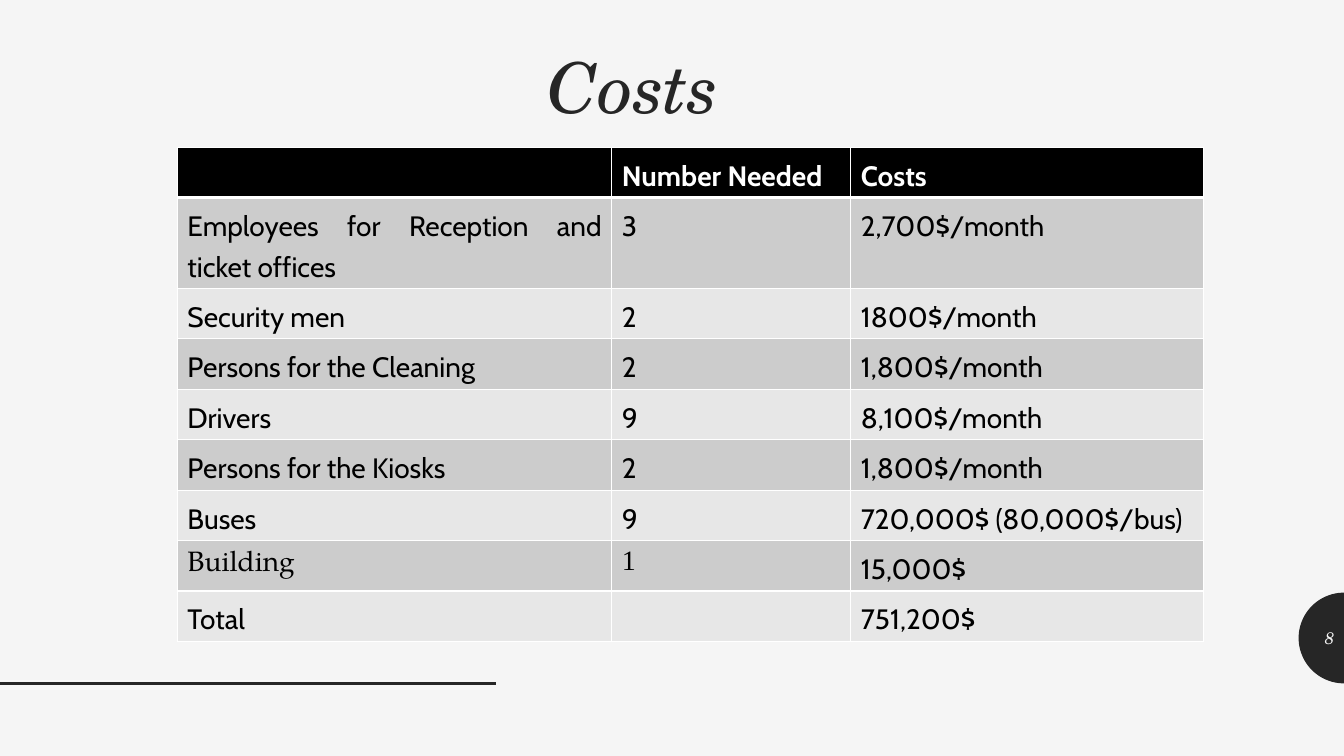
import math
from dataclasses import dataclass
from typing import Any

import lxml.etree
import pptx
import pptx.dml.color
import pptx.enum.shapes
import pptx.enum.text
import pptx.oxml.ns
import pptx.util

ALIGN = pptx.enum.text.PP_ALIGN
ANCHOR = pptx.enum.text.MSO_ANCHOR
qn = pptx.oxml.ns.qn


@dataclass(frozen=True)
class Theme:
    paper: str = "F5F5F5"
    ink: str = "262626"
    header: str = "000000"
    body: str = "000000"
    white: str = "FFFFFF"
    bands: tuple[str, str] = ("CCCCCC", "E7E7E7")
    heading_font: str = "TeX Gyre Schola"
    table_font: str = "Cabin"
    title_size: int = 50
    table_size: int = 20
    number_size: int = 12
    rule_width: int = 2
    border: int = 1
    header_border: int = 3


@dataclass(frozen=True)
class Label:
    text: str
    left: float
    top: float
    width: float
    height: float
    size: int
    color: str
    anchor: Any = ANCHOR.TOP
    line_spacing: float = 1.0


@dataclass(frozen=True)
class CostRow:
    item: str
    number: str
    cost: str
    height: float = 6.4
    item_font: str = Theme.table_font
    number_font: str = Theme.table_font
    plain_number: bool = False


THEME = Theme()
WIDTH = pptx.util.Inches(13.33)
HEIGHT = pptx.util.Inches(7.5)
BADGE_CENTER, BADGE_RADIUS, BADGE_STEPS = 84.4, 6, 48
TABLE_LEFT, TABLE_TOP = 13.2, 19.47
COLUMNS = (32.33, 17.78, 26.26)

LABELS = (
    Label("Costs", 39.08, 6.4, 15.15, 12, THEME.title_size, THEME.ink,
          line_spacing=0.9),
    Label("8", 96.7, 81.73, 3.3, 5.33, THEME.number_size, THEME.paper,
          anchor=ANCHOR.MIDDLE),
)

ROWS = (
    CostRow("", "Number Needed", "Costs"),
    CostRow("Employees for Reception and ticket offices", "3", "2,700$/month",
            height=10.53),
    CostRow("Security men", "2", "1800$/month"),
    CostRow("Persons for the Cleaning", "2", "1,800$/month"),
    CostRow("Drivers", "9", "8,100$/month"),
    CostRow("Persons for the Kiosks", "2", "1,800$/month"),
    CostRow("Buses", "9", "720,000$ (80,000$/bus)"),
    CostRow("Building", "1", "15,000$", item_font="TeX Gyre Pagella",
            number_font="Times New Roman", plain_number=True),
    CostRow("Total", "", "751,200$"),
)


def across(share: float) -> int:
    return round(WIDTH * share / 100)


def down(share: float) -> int:
    return round(HEIGHT * share / 100)


def rgb(color: str) -> pptx.dml.color.RGBColor:
    return pptx.dml.color.RGBColor.from_string(color)


def set_font(p: Any, name: str, size: int, color: str,
             bold: bool = False, italic: bool = False) -> None:
    p.font.name = name
    p.font.size = pptx.util.Pt(size)
    p.font.color.rgb = rgb(color)
    p.font.bold = bold
    p.font.italic = italic


def add_badge(s: Any) -> None:
    radius = down(BADGE_RADIUS)
    angles = [math.pi * (0.5 + i / BADGE_STEPS) for i in range(BADGE_STEPS + 1)]
    points = [(round(WIDTH + radius * math.cos(a)),
               round(down(BADGE_CENTER) + radius * math.sin(a))) for a in angles]
    outline = s.shapes.build_freeform(*points[0])
    outline.add_line_segments(points[1:], close=True)
    sp = outline.convert_to_shape()
    sp.shadow.inherit = False
    sp.fill.solid()
    sp.fill.fore_color.rgb = rgb(THEME.ink)
    sp.line.fill.background()


def add_rule(s: Any) -> None:
    y = down(BADGE_CENTER + BADGE_RADIUS)
    rule = s.shapes.add_connector(
        pptx.enum.shapes.MSO_CONNECTOR.STRAIGHT, 0, y, across(36.91), y)
    rule.line.color.rgb = rgb(THEME.ink)
    rule.line.width = pptx.util.Pt(THEME.rule_width)
    lxml.etree.SubElement(rule._element.spPr, qn("a:effectLst"))


def add_label(s: Any, label: Label) -> None:
    sp = s.shapes.add_textbox(across(label.left), down(label.top),
                              across(label.width), down(label.height))
    tf = sp.text_frame
    tf.word_wrap = True
    tf.vertical_anchor = label.anchor
    p = tf.paragraphs[0]
    p.text = label.text
    p.alignment = ALIGN.RIGHT
    p.line_spacing = label.line_spacing
    set_font(p, THEME.heading_font, label.size, label.color, italic=True)


def add_borders(cell: Any, row: int) -> None:
    tc_pr = cell._tc.get_or_add_tcPr()
    heavy = {(0, "B"), (1, "T")}
    for side in "LRTB":
        width = THEME.header_border if (row, side) in heavy else THEME.border
        ln = lxml.etree.SubElement(tc_pr, qn(f"a:ln{side}"),
                                   w=str(pptx.util.Pt(width)))
        fill = lxml.etree.SubElement(ln, qn("a:solidFill"))
        lxml.etree.SubElement(fill, qn("a:srgbClr"), val=THEME.white)


def fill_cell(cell: Any, row: int, text: str, font: str, plain: bool) -> None:
    header = row == 0
    add_borders(cell, row)
    cell.fill.solid()
    cell.fill.fore_color.rgb = rgb(
        THEME.header if header else THEME.bands[(row - 1) % 2])
    p = cell.text_frame.paragraphs[0]
    p.text = text
    set_font(p, font, THEME.table_size,
             THEME.white if header else THEME.body, bold=header)
    if not plain:
        p.alignment = ALIGN.JUSTIFY
        p.line_spacing = 1.2
        p.space_after = pptx.util.Pt(4)


def add_costs(s: Any) -> None:
    table = s.shapes.add_table(
        len(ROWS), len(COLUMNS), across(TABLE_LEFT), down(TABLE_TOP),
        across(sum(COLUMNS)), down(sum(row.height for row in ROWS))).table
    for column, share in zip(table.columns, COLUMNS):
        column.width = across(share)
    for i, row in enumerate(ROWS):
        table.rows[i].height = down(row.height)
        fill_cell(table.cell(i, 0), i, row.item, row.item_font, False)
        fill_cell(table.cell(i, 1), i, row.number, row.number_font,
                  row.plain_number)
        fill_cell(table.cell(i, 2), i, row.cost, THEME.table_font, False)


def main() -> None:
    prs = pptx.Presentation()
    prs.slide_width, prs.slide_height = WIDTH, HEIGHT
    s = prs.slides.add_slide(prs.slide_layouts[6])
    s.background.fill.solid()
    s.background.fill.fore_color.rgb = rgb(THEME.paper)
    add_badge(s)
    add_rule(s)
    for label in LABELS:
        add_label(s, label)
    add_costs(s)
    prs.save("out.pptx")


if __name__ == "__main__":
    main()
